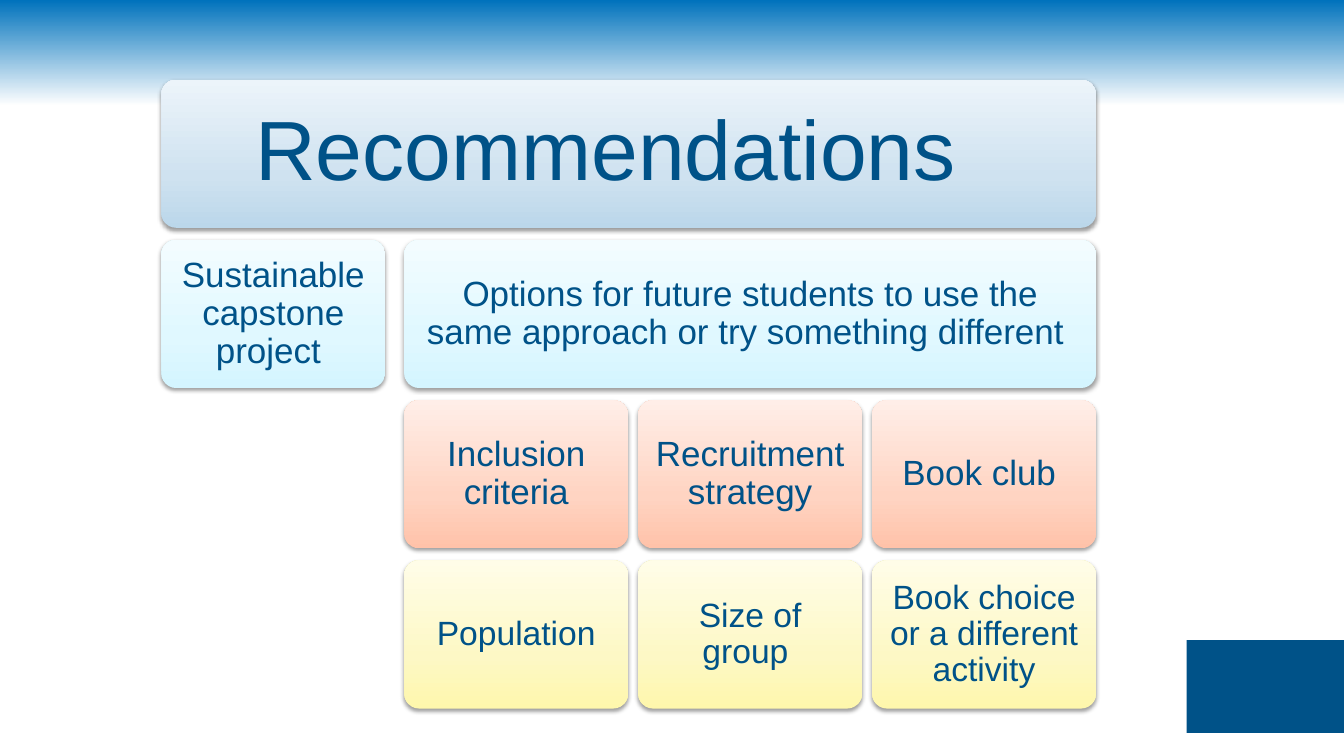
from lxml.etree import SubElement
from pptx import Presentation
from pptx.dml.color import RGBColor
from pptx.enum.shapes import MSO_SHAPE
from pptx.enum.text import MSO_ANCHOR, PP_ALIGN
from pptx.oxml.ns import qn
from pptx.util import Inches, Pt

NAVY = RGBColor(0x00, 0x52, 0x88)
BLUE = RGBColor(0x00, 0x72, 0xBC)
WHITE = RGBColor(0xFF, 0xFF, 0xFF)
BLACK = RGBColor(0x00, 0x00, 0x00)
STEEL = (RGBColor(0xBB, 0xD7, 0xEA), RGBColor(0xCF, 0xE2, 0xF0), RGBColor(0xEC, 0xF4, 0xFA))
AQUA = (RGBColor(0xD4, 0xF5, 0xFF), RGBColor(0xE0, 0xF8, 0xFF), RGBColor(0xF3, 0xFC, 0xFF))
CORAL = (RGBColor(0xFF, 0xC2, 0xA9), RGBColor(0xFF, 0xD4, 0xC2), RGBColor(0xFF, 0xEE, 0xE8))
LEMON = (RGBColor(0xFE, 0xF7, 0xAC), RGBColor(0xFD, 0xF8, 0xC5), RGBColor(0xFF, 0xFD, 0xE8))

LEFT, INNER, TOP = 1.6, 4.01, 0.79
WIDE, HIGH = 2.22, 1.47
STEP, DROP = 2.32, 1.59


def add_color(parent, color):
    return SubElement(parent, qn("a:srgbClr"), val=str(color))


def paint(fill, host, stops, angle):
    fill.gradient()
    fill.gradient_angle = angle
    ramp = host.find(".//" + qn("a:gsLst"))
    for stop in list(ramp):
        ramp.remove(stop)
    for place, color in stops:
        add_color(SubElement(ramp, qn("a:gs"), pos=str(place * 1000)), color)


def add_shade(shape):
    shape.shadow.inherit = False
    effects = shape.element.spPr.find(qn("a:effectLst"))
    shade = SubElement(effects, qn("a:outerShdw"), blurRad=str(Pt(3.1)),
                       dist=str(Pt(1.6)), dir="5400000", rotWithShape="0")
    SubElement(add_color(shade, BLACK), qn("a:alpha"), val="38000")


def add_card(slide, text, left, row, width, tones, size, pad=0.1, right=0.1):
    card = slide.shapes.add_shape(MSO_SHAPE.ROUNDED_RECTANGLE, Inches(left),
                                  Inches(TOP + row * DROP), Inches(width), Inches(HIGH))
    card.adjustments[0] = 0.1
    paint(card.fill, card.element.spPr, zip((0, 35, 100), tones), 90)
    card.line.fill.background()
    add_shade(card)
    frame = card.text_frame
    frame.word_wrap = True
    frame.vertical_anchor = MSO_ANCHOR.MIDDLE
    frame.margin_left = frame.margin_top = frame.margin_bottom = Inches(pad)
    frame.margin_right = Inches(right)
    frame.text = text
    line = frame.paragraphs[0]
    line.alignment = PP_ALIGN.CENTER
    line.line_spacing = 0.9
    font = line.runs[0].font
    font.name = "Arial"
    font.size = Pt(size)
    font.color.rgb = NAVY


def add_block(slide):
    block = slide.shapes.add_shape(MSO_SHAPE.RECTANGLE, Inches(11.77), Inches(6.35),
                                   Inches(1.56), Inches(0.92))
    block.fill.solid()
    block.fill.fore_color.rgb = NAVY
    block.line.fill.background()
    block.shadow.inherit = False


def main():
    deck = Presentation()
    deck.slide_width, deck.slide_height = Inches(13.33), Inches(7.5)
    slide = deck.slides.add_slide(deck.slide_layouts[6])
    sky = ((0, BLUE), (14, WHITE), (100, WHITE))
    paint(slide.background.fill, slide.element, sky, 270)
    add_block(slide)

    span = 2 * STEP + WIDE
    add_card(slide, "Recommendations", LEFT, 0, INNER - LEFT + span, STEEL, 60, 0.25, 0.71)
    add_card(slide, "Sustainable capstone project ", LEFT, 1, WIDE, AQUA, 25)
    add_card(slide, "Options for future students to use the same approach "
             "or try something different ", INNER, 1, span, AQUA, 25)
    topics = (
        ("Inclusion criteria", "Population"),
        ("Recruitment strategy", "Size of group "),
        ("Book club ", "Book choice or a different activity"),
    )
    for col, (topic, detail) in enumerate(topics):
        left = INNER + col * STEP
        add_card(slide, topic, left, 2, WIDE, CORAL, 25)
        add_card(slide, detail, left, 3, WIDE, LEMON, 24)
    deck.save("out.pptx")


if __name__ == "__main__":
    main()
